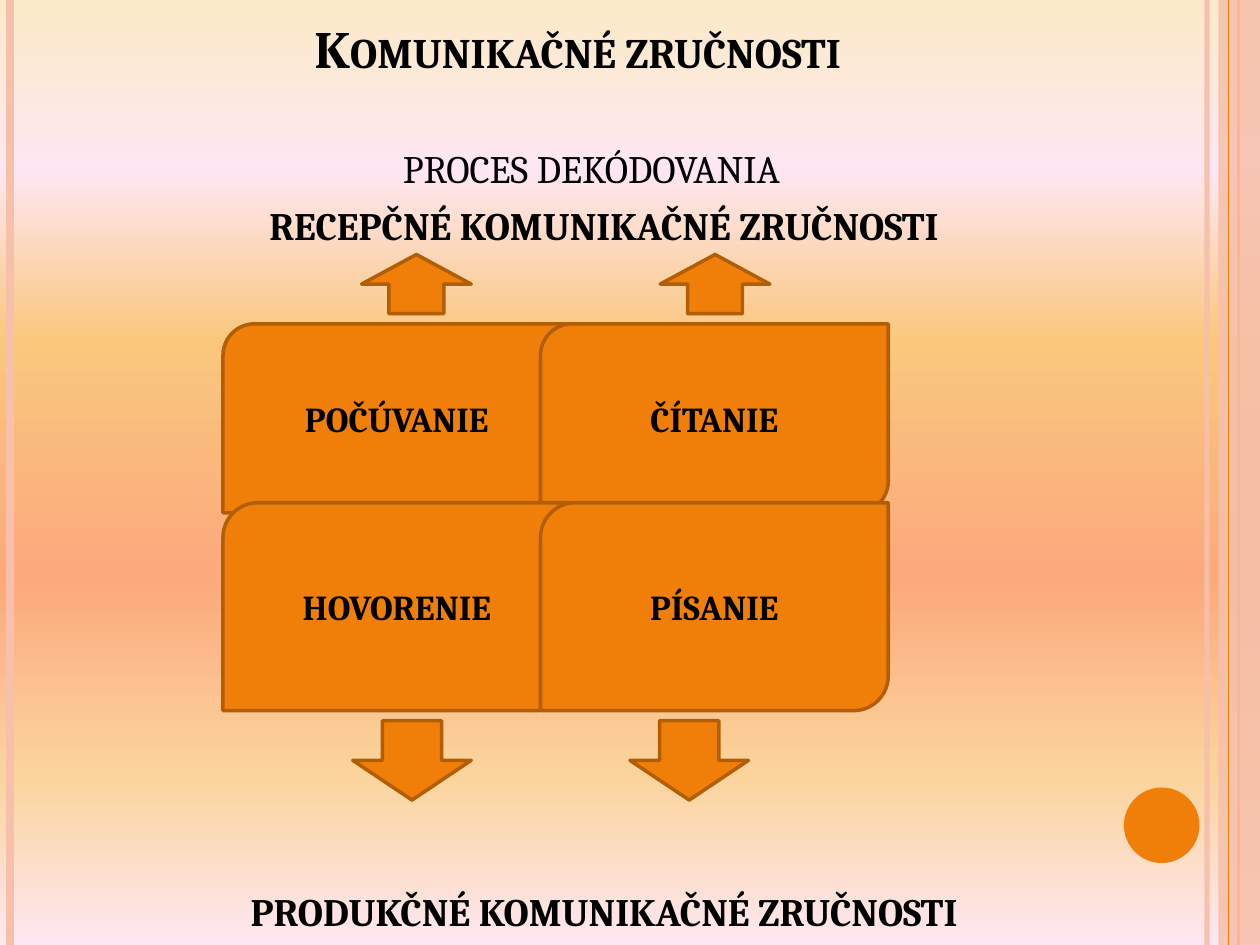
from dataclasses import dataclass

from lxml.etree import SubElement
from pptx import Presentation
from pptx.dml.color import RGBColor
from pptx.enum.shapes import MSO_CONNECTOR, MSO_SHAPE
from pptx.enum.text import MSO_ANCHOR, PP_ALIGN
from pptx.oxml import parse_xml
from pptx.oxml.ns import nsdecls, qn
from pptx.util import Inches, Pt


@dataclass(frozen=True)
class Theme:
    """Colours, font and type sizes of the slide."""
    accent: str = "F07F09"
    edge: str = "B25E07"
    pale: str = "F6C0AB"
    text: str = "000000"
    font: str = "Cambria"
    title: float = 30
    caption: float = 22.2
    card: float = 20
    sky: tuple = ((0, "FBEAC7"), (18, "FEE7F2"), (36, "FAC77D"),
                  (61, "FBA97D"), (82, "FBD49C"), (100, "FEE7F2"))


T = Theme()


def rgb(color):
    """Turn a hex string into a colour."""
    return RGBColor.from_string(color)


def set_alpha(owner, percent):
    """Set the opacity of the solid colour inside an element."""
    color = next(owner.iter(qn("a:srgbClr")))
    SubElement(color, qn("a:alpha")).set("val", str(percent * 1000))


def paint_background(s):
    """Fill the slide with the vertical sunset gradient."""
    stops = "".join(f'<a:gs pos="{pos * 1000}"><a:srgbClr val="{c}"/></a:gs>'
                    for pos, c in T.sky)
    bg = parse_xml(f'<p:bg {nsdecls("p", "a")}><p:bgPr><a:gradFill>'
                   f'<a:gsLst>{stops}</a:gsLst><a:lin ang="5400000" scaled="0"/>'
                   '</a:gradFill><a:effectLst/></p:bgPr></p:bg>')
    s.element.cSld.insert(0, bg)


def add_shape(s, kind, box, fill, edge=None):
    """Add a flat preset shape with an optional outline."""
    sp = s.shapes.add_shape(kind, *map(Inches, box))
    sp.shadow.inherit = False
    sp.fill.solid()
    sp.fill.fore_color.rgb = rgb(fill)
    if edge:
        sp.line.color.rgb = rgb(edge)
        sp.line.width = Pt(2)
    else:
        sp.line.fill.background()
    return sp


def add_rule(s, x, height, color, width):
    """Add a vertical rule from the top of the slide."""
    c = s.shapes.add_connector(MSO_CONNECTOR.STRAIGHT, Inches(x), 0,
                               Inches(x), Inches(height))
    c.line.color.rgb = rgb(color)
    c.line.width = Pt(width)
    SubElement(c.element.spPr, qn("a:effectLst"))
    return c


def add_frame(s, width, height):
    """Draw the side rules, the right band and the dot."""
    set_alpha(add_rule(s, width - 0.42, height, T.pale, 3).element.spPr, 93)
    add_rule(s, 0.08, height, T.pale, 4.5)
    add_rule(s, width - 0.17, height, T.accent, 1.5)
    band = add_shape(s, MSO_SHAPE.RECTANGLE,
                     (width - 0.33, 0, 0.33, height), T.pale)
    set_alpha(band.element.spPr, 87)
    add_rule(s, width - 0.25, height, T.accent, 0.75)
    add_shape(s, MSO_SHAPE.OVAL, (width - 1.08, 6.25, 0.6, 0.6), T.accent)


def write(sp, text, size, bold=True, anchor=MSO_ANCHOR.MIDDLE):
    """Write one centred paragraph into a shape and return its run."""
    tf = sp.text_frame
    tf.word_wrap = True
    tf.vertical_anchor = anchor
    p = tf.paragraphs[0]
    p.alignment = PP_ALIGN.CENTER
    p.font.name = T.font
    p.font.size = Pt(size)
    p.font.bold = bold
    p.font.color.rgb = rgb(T.text)
    r = p.add_run()
    r.text = text
    return r


def add_title(s, box, text):
    """Add the title in small capitals."""
    sp = s.shapes.add_textbox(*map(Inches, box))
    r = write(sp, text, T.title, anchor=MSO_ANCHOR.BOTTOM)
    r.font._element.set("cap", "small")


def add_caption(s, box, text, bold=True):
    """Add one caption line."""
    sp = s.shapes.add_textbox(*map(Inches, box))
    write(sp, text, T.caption, bold, MSO_ANCHOR.TOP)


def add_cards(s, box, rows):
    """Place overlapping cards in a grid of two columns."""
    left, top, width = box
    card_w = 2.76
    step_x = width - card_w
    for y, card_h, labels in rows:
        for i, label in enumerate(labels):
            sp = add_shape(s, MSO_SHAPE.ROUND_2_DIAG_RECTANGLE,
                           (left + i * step_x, top + y, card_w, card_h),
                           T.accent, T.edge)
            write(sp, label, T.card)


def add_arrows(s, kind, lefts, top, width, height):
    """Place a row of block arrows."""
    for left in lefts:
        add_shape(s, kind, (left, top, width, height), T.accent, T.edge)


def main():
    """Build the slide and save it."""
    prs = Presentation()
    width, height = 10, 7.5
    prs.slide_width, prs.slide_height = Inches(width), Inches(height)
    s = prs.slides.add_slide(prs.slide_layouts[6])
    paint_background(s)
    add_frame(s, width, height)
    add_title(s, (0.5, 0, 8.17, 0.68), "Komunikačné zručnosti")
    add_caption(s, (0.4, 1.1, 8.59, 0.47), "PROCES DEKÓDOVANIA", bold=False)
    add_caption(s, (0.5, 1.55, 8.59, 0.47), "RECEPČNÉ KOMUNIKAČNÉ ZRUČNOSTI")
    add_caption(s, (0.5, 7, 8.59, 0.47), "PRODUKČNÉ KOMUNIKAČNÉ ZRUČNOSTI")
    add_cards(s, (1.77, 2.57, 5.28),
              ((0, 1.5, ("POČÚVANIE", "ČÍTANIE")),
               (1.42, 1.65, ("HOVORENIE", "PÍSANIE"))))
    add_arrows(s, MSO_SHAPE.UP_ARROW, (2.87, 5.24), 2.02, 0.87, 0.47)
    add_arrows(s, MSO_SHAPE.DOWN_ARROW, (2.8, 5), 5.72, 0.94, 0.63)
    prs.save("out.pptx")


if __name__ == "__main__":
    main()
